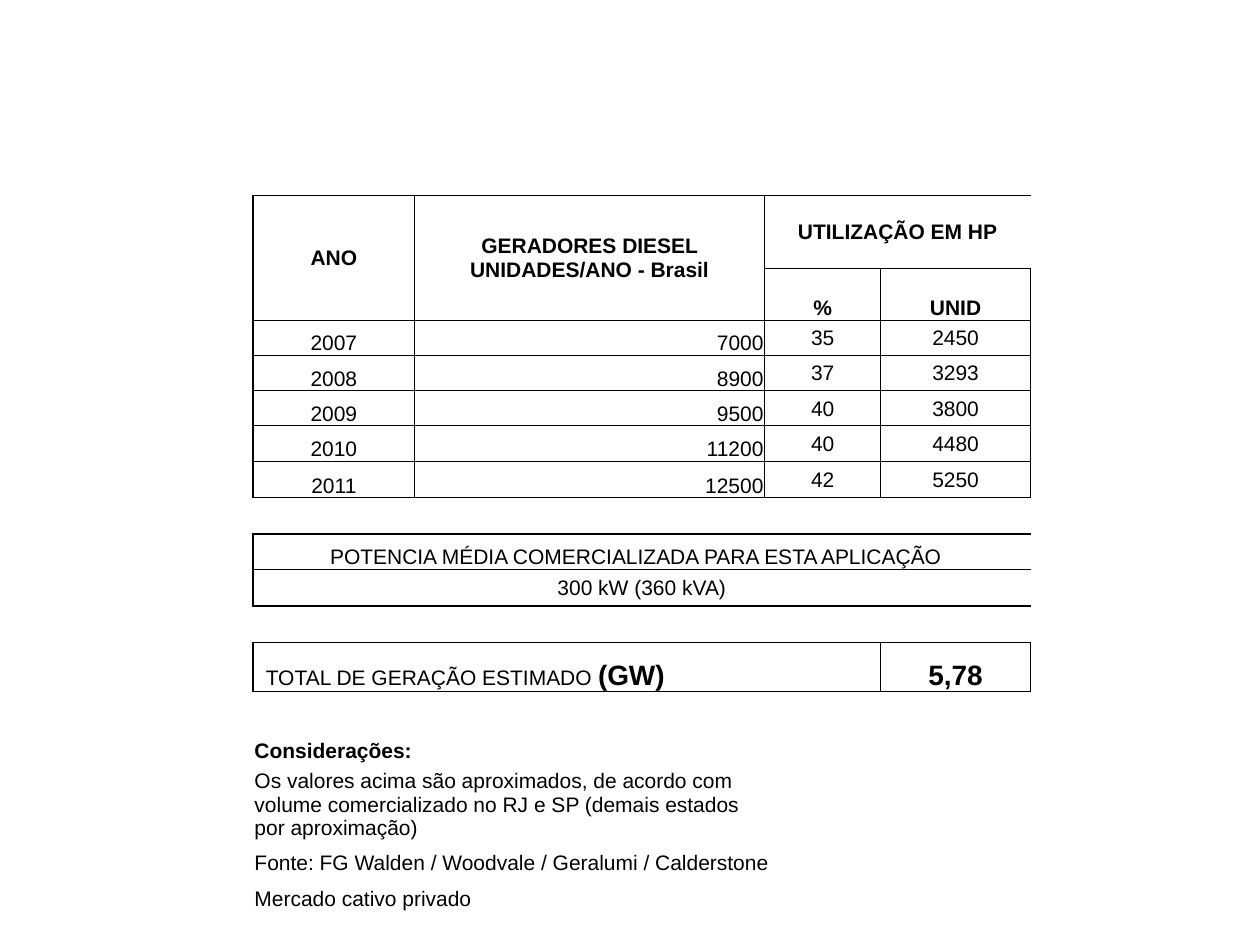
"""Build a slide with the table of diesel generator sales and estimated power."""
from dataclasses import dataclass

from lxml.etree import SubElement
from pptx import Presentation
from pptx.dml.color import RGBColor
from pptx.enum.text import MSO_ANCHOR, PP_ALIGN
from pptx.oxml.ns import qn
from pptx.table import Table, _Cell
from pptx.util import Inches, Pt

COLORS = {"ink": "000000"}
FONT = "Arial"
NO_STYLE = "{2D5ABB26-0587-4C30-8999-92F81FD0307C}"
LEFT, CENTER, RIGHT = PP_ALIGN.LEFT, PP_ALIGN.CENTER, PP_ALIGN.RIGHT
MIDDLE, BOTTOM = MSO_ANCHOR.MIDDLE, MSO_ANCHOR.BOTTOM
COL_WIDTHS = [1.28, 2.78, 0.92, 1.19]
ROW_HEIGHTS = [0.58, 0.41, *[0.28] * 4, 0.29, 0.29, 0.28, 0.29, 0.29, 0.39,
               0.28, 0.29, 0.61, 0.28, 0.28]
FRAMES = [(0, 6), (8, 9), (11, 11)]
SALES = [
    ("2007", "7000", "35", "2450"),
    ("2008", "8900", "37", "3293"),
    ("2009", "9500", "40", "3800"),
    ("2010", "11200", "40", "4480"),
    ("2011", "12500", "42", "5250"),
]


@dataclass
class Run:
    text: str
    bold: bool = False
    size: float = 12


@dataclass
class Entry:
    row: int
    col: int
    runs: list[Run]
    align: PP_ALIGN = CENTER
    anchor: MSO_ANCHOR = BOTTOM
    rows: int = 1
    cols: int = 1
    indent: float = 0.01


HEADER = [
    Entry(0, 0, [Run("ANO", True)], anchor=MIDDLE, rows=2),
    Entry(0, 1, [Run("GERADORES DIESEL UNIDADES/ANO - Brasil", True)], anchor=MIDDLE, rows=2),
    Entry(0, 2, [Run("UTILIZAÇÃO EM HP", True)], anchor=MIDDLE, cols=2),
    Entry(1, 2, [Run("%", True)]),
    Entry(1, 3, [Run("UNID", True)]),
]
YEARS = [
    Entry(i, j, [Run(text)], RIGHT if j == 1 else CENTER, BOTTOM if j < 2 else MIDDLE)
    for i, values in enumerate(SALES, 2) for j, text in enumerate(values)
]
TOTALS = [
    Entry(8, 0, [Run("POTENCIA MÉDIA COMERCIALIZADA PARA ESTA APLICAÇÃO")],
          LEFT, cols=4, indent=0.61),
    Entry(9, 0, [Run("300 kW (360 kVA)")], anchor=MIDDLE, cols=4),
    Entry(11, 0, [Run("TOTAL DE GERAÇÃO ESTIMADO "), Run("(GW)", True, 16)],
          LEFT, cols=3, indent=0.1),
    Entry(11, 3, [Run("5,78", True, 16)]),
]
NOTES = [
    Entry(13, 0, [Run("Considerações:", True)], LEFT, cols=2),
    Entry(14, 0, [Run("Os valores acima são aproximados, de acordo com volume comercializado "
                      "no RJ e SP (demais estados por aproximação)")], LEFT, cols=2),
    Entry(15, 0, [Run("Fonte: FG Walden / Woodvale / Geralumi / Calderstone")], LEFT, cols=3),
    Entry(16, 0, [Run("Mercado cativo privado")], LEFT, cols=2),
]


def add_border(cell: _Cell, side: str, width: float) -> None:
    """Draw one side of a cell."""
    ln = SubElement(cell._tc.get_or_add_tcPr(), qn(f"a:ln{side}"), w=str(Pt(width)))
    fill = SubElement(ln, qn("a:solidFill"))
    SubElement(fill, qn("a:srgbClr"), val=COLORS["ink"])


def frame_entry(table: Table, e: Entry) -> None:
    """Draw the edges of an entry, thick where they lie on its frame."""
    frame = next((f for f in FRAMES if f[0] <= e.row <= f[1]), None)
    if frame is None:
        return
    first, last = frame
    bottom, right = e.row + e.rows - 1, e.col + e.cols - 1
    for i in range(e.row, bottom + 1):
        for j in range(e.col, right + 1):
            edges = [
                ("L", j == e.col, j == 0),
                ("R", j == right, j == len(COL_WIDTHS) - 1),
                ("T", i == e.row, i == first),
                ("B", i == bottom, i == last),
            ]
            for side, on_edge, outer in edges:
                if on_edge:
                    add_border(table.cell(i, j), side, 1 if outer else 0.5)


def fill_entry(table: Table, e: Entry) -> None:
    """Merge, frame and write one entry."""
    cell = table.cell(e.row, e.col)
    if e.rows * e.cols > 1:
        cell.merge(table.cell(e.row + e.rows - 1, e.col + e.cols - 1))
    frame_entry(table, e)
    cell.vertical_anchor = e.anchor
    cell.margin_left = Inches(e.indent)
    p = cell.text_frame.paragraphs[0]
    p.alignment = e.align
    for run in e.runs:
        r = p.add_run()
        r.text = run.text
        r.font.name = FONT
        r.font.size = Pt(run.size)
        r.font.bold = run.bold
        r.font.color.rgb = RGBColor.from_string(COLORS["ink"])


def main() -> None:
    """Build and save the slide."""
    prs = Presentation()
    prs.slide_width, prs.slide_height = Inches(10), Inches(7.5)
    s = prs.slides.add_slide(prs.slide_layouts[6])
    table = s.shapes.add_table(
        len(ROW_HEIGHTS), len(COL_WIDTHS), Inches(2.01), Inches(1.55),
        Inches(sum(COL_WIDTHS)), Inches(sum(ROW_HEIGHTS))).table
    table.first_row = table.horz_banding = False
    table._tbl.tblPr.find(qn("a:tableStyleId")).text = NO_STYLE
    for column, width in zip(table.columns, COL_WIDTHS):
        column.width = Inches(width)
    for row, height in zip(table.rows, ROW_HEIGHTS):
        row.height = Inches(height)
    for cell in table.iter_cells():
        cell.margin_left = cell.margin_right = cell.margin_top = Inches(0.01)
        cell.margin_bottom = 0
    for e in HEADER + YEARS + TOTALS + NOTES:
        fill_entry(table, e)
    for cell in table.iter_cells():
        cell.fill.background()
        if not cell.text_frame.text:
            SubElement(cell.text_frame.paragraphs[0]._p, qn("a:endParaRPr"), sz="1200")
    prs.save("out.pptx")


if __name__ == "__main__":
    main()
